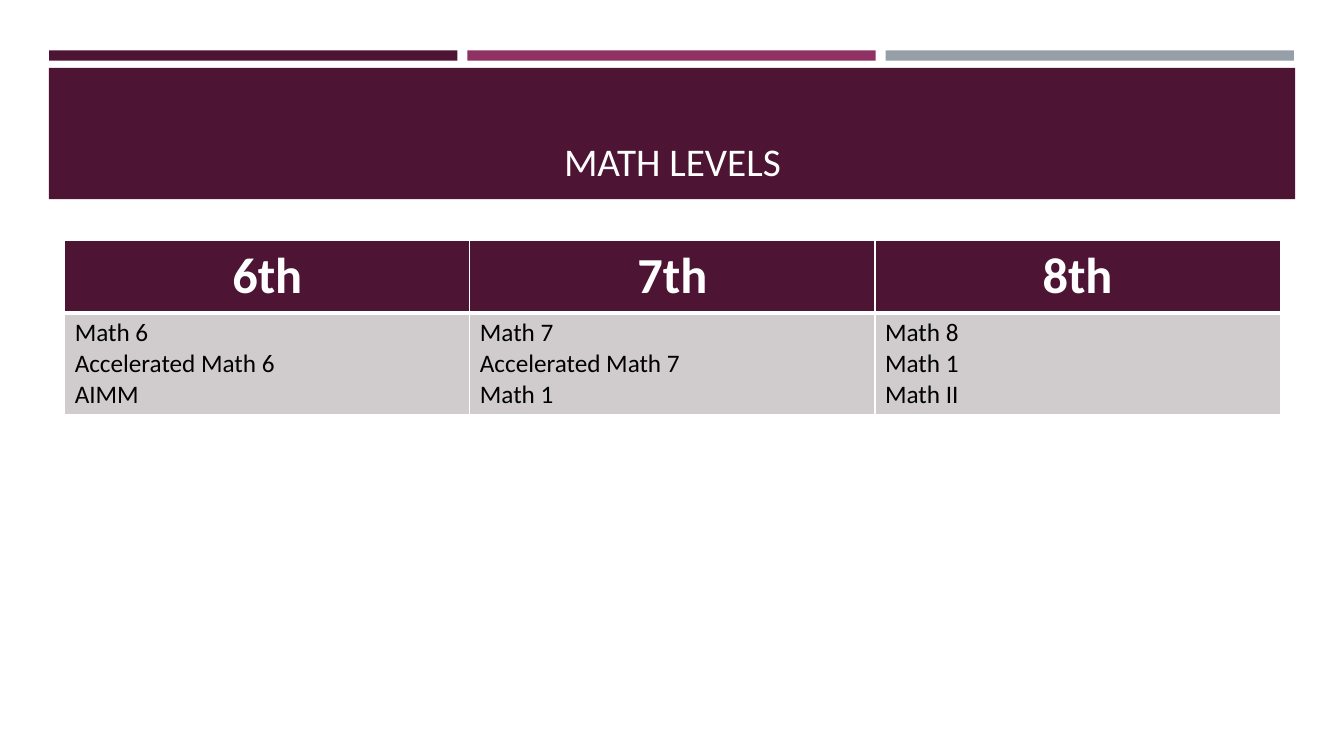
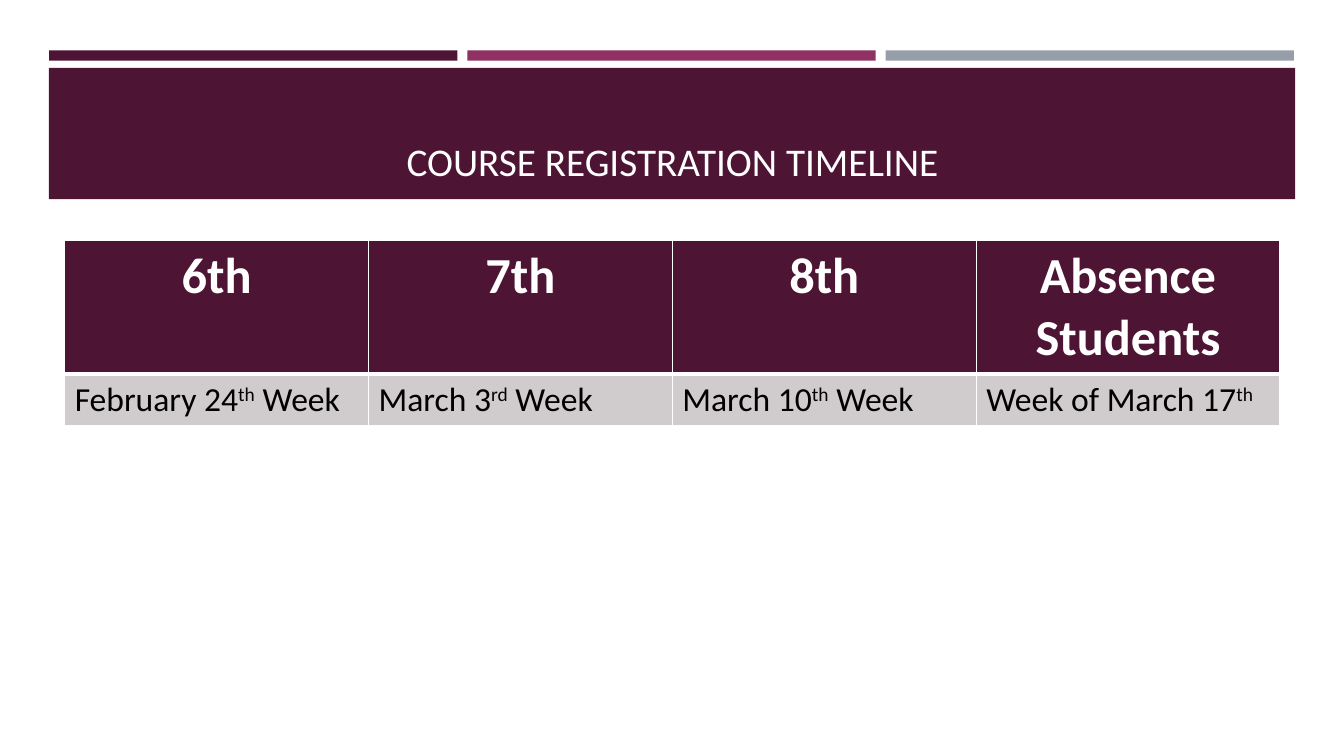
import dataclasses

import pptx
import pptx.dml.color
import pptx.enum.shapes
import pptx.enum.text
import pptx.util
from lxml import etree
from pptx.oxml.ns import qn
from pptx.util import Cm

ALIGN = pptx.enum.text.PP_ALIGN


@dataclasses.dataclass(frozen=True)
class Theme:
    plum: str = "4D1434"
    magenta: str = "903163"
    slate: str = "969FA7"
    pale: str = "D0CCCE"
    white: str = "FFFFFF"
    black: str = "000000"
    font: str = "Calibri"
    title_size: int = 28
    header_size: int = 36
    list_size: int = 18
    date_size: int = 24
    thin_rule: int = 1
    thick_rule: int = 3


def rgb(color):
    return pptx.dml.color.RGBColor.from_string(color)


def write(frame, text, *, font, size, color, bold=False, align=ALIGN.LEFT):
    """Fill a frame: one paragraph a line, with superscripts between carets."""
    for number, line in enumerate(text.split("\n")):
        paragraph = frame.paragraphs[0] if number == 0 else frame.add_paragraph()
        paragraph.alignment = align
        for position, part in enumerate(line.split("^")):
            if not part:
                continue
            run = paragraph.add_run()
            run.text = part
            run.font.name = font
            run.font.size = pptx.util.Pt(size)
            run.font.bold = bold
            run.font.color.rgb = rgb(color)
            if position % 2:
                run._r.get_or_add_rPr().set("baseline", "30000")


def set_borders(cell, color, **widths):
    """Draw cell edges; widths in points are keyed L, R, T, B in that order."""
    properties = cell._tc.get_or_add_tcPr()
    for side, width in widths.items():
        line = etree.SubElement(properties, qn(f"a:ln{side}"),
                                w=str(pptx.util.Pt(width)))
        fill = etree.SubElement(line, qn("a:solidFill"))
        etree.SubElement(fill, qn("a:srgbClr"), val=color)


class Deck:
    """Holds the presentation, its theme and the current slide."""

    def __init__(self, theme):
        self.theme = theme
        self.presentation = pptx.Presentation()
        self.presentation.slide_width = Cm(33.87)
        self.presentation.slide_height = Cm(19.05)
        self.slide = None

    def add_slide(self, heading):
        layout = self.presentation.slide_layouts.get_by_name("Title Only")
        self.slide = self.presentation.slides.add_slide(layout)
        theme = self.theme
        for column, color in enumerate((theme.plum, theme.magenta, theme.slate)):
            self.band(1.24 + column * 10.54, 1.27, 10.29, 0.26, color)
        self.band(1.23, 1.71, 31.41, 3.31, theme.plum)
        self.title(heading)

    def band(self, left, top, width, height, color):
        band = self.slide.shapes.add_shape(
            pptx.enum.shapes.MSO_SHAPE.RECTANGLE,
            Cm(left), Cm(top), Cm(width), Cm(height))
        band.shadow.inherit = False
        band.fill.solid()
        band.fill.fore_color.rgb = rgb(color)
        band.line.fill.background()

    def title(self, heading):
        title = self.slide.shapes.title
        title.element.getparent().append(title.element)  # in front of the band
        title.left, title.top = Cm(1.63), Cm(1.96)
        title.width, title.height = Cm(30.63), Cm(2.82)
        frame = title.text_frame
        frame.word_wrap = True
        frame.auto_size = pptx.enum.text.MSO_AUTO_SIZE.NONE
        frame.vertical_anchor = pptx.enum.text.MSO_ANCHOR.BOTTOM
        write(frame, heading, font=self.theme.font, size=self.theme.title_size,
              color=self.theme.white, align=ALIGN.CENTER)

    def grade_table(self, entries, body_size, row_heights):
        """Add a table with one column for each heading and its text."""
        table = self.slide.shapes.add_table(
            2, len(entries), Cm(1.63), Cm(6.07),
            Cm(30.63), Cm(sum(row_heights))).table
        for row, height in zip(table.rows, row_heights):
            row.height = Cm(height)
        theme = self.theme
        thin, thick = theme.thin_rule, theme.thick_rule
        for column, (heading, details) in enumerate(entries.items()):
            header, body = table.cell(0, column), table.cell(1, column)
            set_borders(header, theme.white, L=thin, R=thin, T=thin, B=thick)
            set_borders(body, theme.white, L=thin, R=thin, T=thick, B=thin)
            for cell, color in ((header, theme.plum), (body, theme.pale)):
                cell.fill.solid()
                cell.fill.fore_color.rgb = rgb(color)
            write(header.text_frame, heading, font=theme.font, bold=True,
                  size=theme.header_size, color=theme.white, align=ALIGN.CENTER)
            write(body.text_frame, details, font=theme.font,
                  size=body_size, color=theme.black)


def main():
    theme = Theme()
    deck = Deck(theme)

    deck.add_slide("MATH LEVELS")
    deck.grade_table({
        "6th": "Math 6\nAccelerated Math 6\nAIMM",
        "7th": "Math 7\nAccelerated Math 7\nMath 1",
        "8th": "Math 8\nMath 1\nMath II",
    }, theme.list_size, (1.78, 2.54))

    deck.add_slide("COURSE REGISTRATION TIMELINE")
    deck.grade_table({
        "6th": "February 24^th^ Week",
        "7th": "March 3^rd^ Week",
        "8th": "March 10^th^ Week",
        "Absence Students": "Week of March 17^th",
    }, theme.date_size, (3.35, 1.27))

    deck.presentation.save("out.pptx")


if __name__ == "__main__":
    main()
